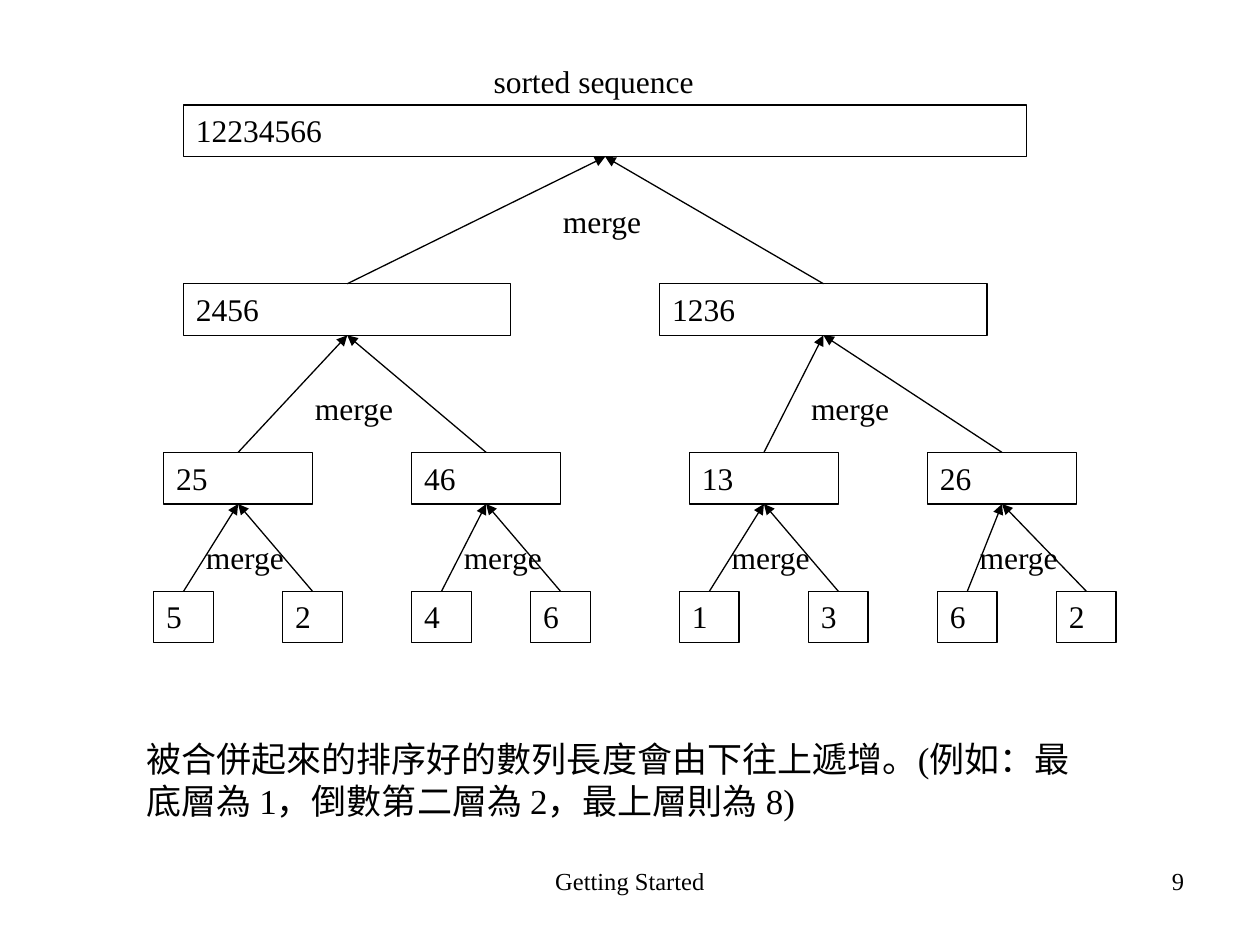
from lxml import etree
from pptx import Presentation, util as u
from pptx.dml.color import RGBColor
from pptx.enum import shapes, text
from pptx.oxml.ns import qn

CELL = u.Mm(2)
LEFT, MID, RIGHT, JUST = (text.PP_ALIGN.LEFT, text.PP_ALIGN.CENTER,
                          text.PP_ALIGN.RIGHT, text.PP_ALIGN.JUSTIFY)


def color(code):
    return RGBColor.from_string(code)


def grid(*cells):
    return [u.Emu(round(c * CELL)) for c in cells]


class Board:
    font = "Times New Roman"
    ink = "000000"
    size = 18
    line = 0.75

    def __init__(self, slide):
        self.slide = slide

    def fill_in(self, shape, words, size, align, wrap=True, grow=True):
        frame = shape.text_frame
        frame.text = words
        frame.word_wrap = wrap
        frame.vertical_anchor = text.MSO_ANCHOR.TOP
        if grow:
            frame.auto_size = text.MSO_AUTO_SIZE.SHAPE_TO_FIT_TEXT
        for para in frame.paragraphs:
            para.alignment = align
            for run in para.runs:
                run.font.name = self.font
                run.font.size = u.Pt(size)
                run.font.color.rgb = color(self.ink)

    def label(self, words, x, y, w, h, size=size, align=LEFT, **kw):
        box = self.slide.shapes.add_textbox(*grid(x, y, w, h))
        self.fill_in(box, words, size, align, **kw)

    def box(self, words, x, y, w, h):
        rect = self.slide.shapes.add_shape(
            shapes.MSO_SHAPE.RECTANGLE, *grid(x, y, w, h))
        rect.shadow.inherit = False
        rect.fill.background()
        rect.line.color.rgb = color(self.ink)
        rect.line.width = u.Pt(self.line)
        self.fill_in(rect, words, self.size, JUST)
        return rect

    def arrow(self, child, parent):
        link = self.slide.shapes.add_connector(
            shapes.MSO_CONNECTOR.STRAIGHT, 0, 0, 0, 0)
        link.begin_connect(child, 0)
        link.end_connect(parent, 2)
        link.line.color.rgb = color(self.ink)
        link.line.width = u.Pt(self.line)
        props = link._element.spPr
        etree.SubElement(props.find(qn("a:ln")), qn("a:tailEnd"),
                         type="triangle")
        etree.SubElement(props, qn("a:effectLst"))


LEVELS = [
    (10.6, 85, [("12234566", 18.5)]),
    (28.6, 33, [("2456", 18.5), ("1236", 66.5)]),
    (45.6, 15, [("25", 16.5), ("46", 41.5), ("13", 69.5), ("26", 93.5)]),
    (59.6, 6, [("5", 15.5), ("2", 28.5), ("4", 41.5), ("6", 53.5),
               ("1", 68.5), ("3", 81.5), ("6", 94.5), ("2", 106.5)]),
]
MERGES = [
    (19.7, [55.5]),
    (38.6, [30.5, 80.5]),
    (53.6, [19.5, 45.5, 72.5, 97.5]),
]
NOTE = "被合併起來的排序好的數列長度會由下往上遞增。(例如：最底層為 1，倒數第二層為 2，最上層則為 8)"


def main():
    deck = Presentation()
    deck.slide_width, deck.slide_height = u.Inches(10), u.Inches(7.5)
    board = Board(deck.slides.add_slide(deck.slide_layouts[6]))

    board.label("Getting Started", 43.4, 86.7, 40.2, 6.6, 14, MID, grow=False)
    board.label("9", 91, 86.7, 29.6, 6.6, 14, RIGHT, grow=False)

    tree = [[board.box(words, x, y, w, 5.2) for words, x in nodes]
            for y, w, nodes in LEVELS]
    for upper, lower in zip(tree, tree[1:]):
        for i, child in enumerate(lower):
            board.arrow(child, upper[i // 2])

    board.label("sorted sequence", 48.5, 5.6, 22.7, 5.1, wrap=False)
    for y, spots in MERGES:
        for x in spots:
            board.label("merge", x, y, 10.5, 5.1, wrap=False)
    board.label(NOTE, 13.5, 73.7, 99, 9.8, 20)

    deck.save("out.pptx")


if __name__ == "__main__":
    main()
